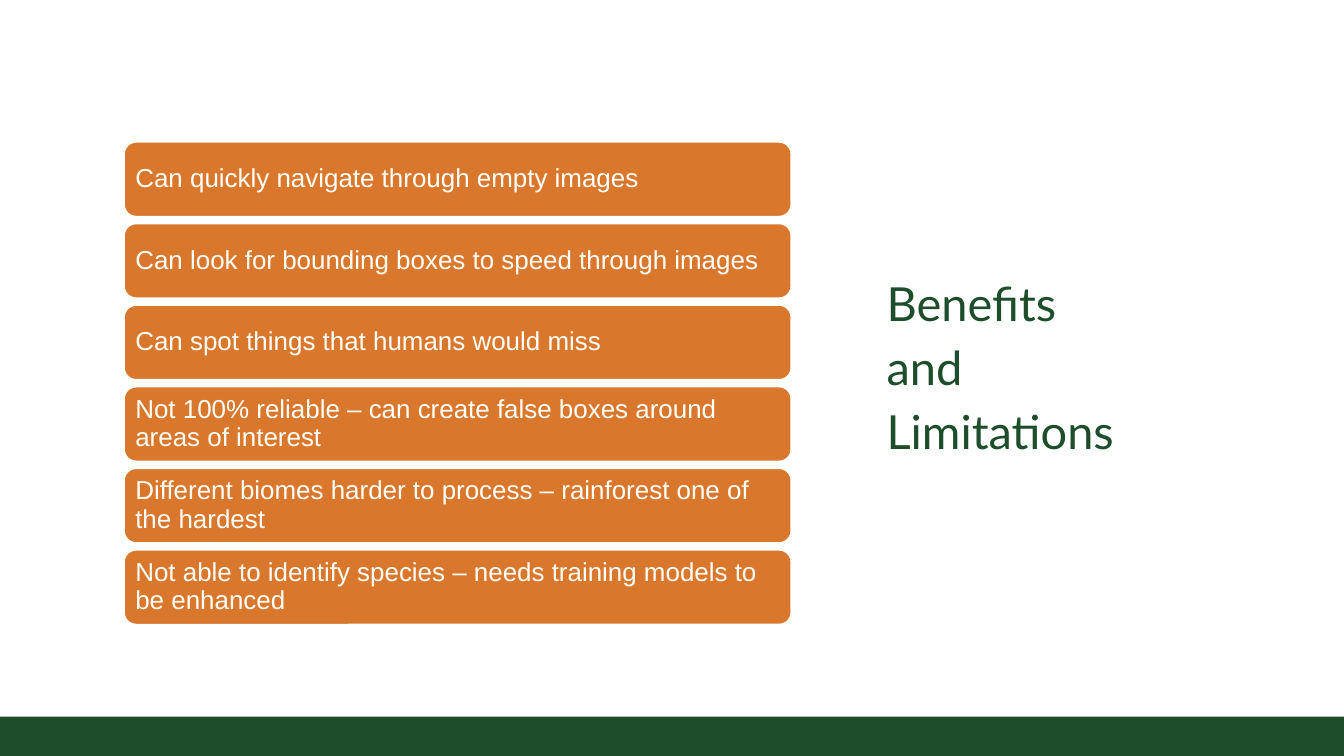
from pptx import Presentation
from pptx.dml.color import RGBColor
from pptx.enum.shapes import MSO_SHAPE
from pptx.enum.text import MSO_ANCHOR, PP_ALIGN
from pptx.util import Cm, Pt

RECTANGLE = MSO_SHAPE.RECTANGLE
ROUNDED = MSO_SHAPE.ROUNDED_RECTANGLE
TOP, MIDDLE = MSO_ANCHOR.TOP, MSO_ANCHOR.MIDDLE
LEFT = PP_ALIGN.LEFT

GREEN = RGBColor(0x1E, 0x4D, 0x2B)
ORANGE = RGBColor(0xD9, 0x78, 0x2C)
WHITE = RGBColor(0xFF, 0xFF, 0xFF)

SLIDE_WIDTH, SLIDE_HEIGHT = 38.38, 21.59
BAR_HEIGHT = 1.12
CARD_LEFT, CARD_TOP = 3.53, 4.04
CARD_WIDTH, CARD_HEIGHT, CARD_PITCH = 19.08, 2.16, 2.33

POINTS = [
    "Can quickly navigate through empty images",
    "Can look for bounding boxes to speed through images",
    "Can spot things that humans would miss",
    "Not 100% reliable – can create false boxes around areas of interest",
    "Different biomes harder to process – rainforest one of the hardest",
    "Not able to identify species – needs training models to be enhanced",
]


def write_text(shape, lines, *, font, size, color, anchor, margins,
               line_spacing=1.0, space_after=0):
    frame = shape.text_frame
    frame.word_wrap = True
    frame.vertical_anchor = anchor
    frame.margin_left = frame.margin_right = Cm(margins[0])
    frame.margin_top = frame.margin_bottom = Cm(margins[1])
    frame.text = "\n".join(lines)
    for paragraph in frame.paragraphs:
        paragraph.alignment = LEFT
        paragraph.line_spacing = line_spacing
        paragraph.space_after = Pt(space_after)
        paragraph.font.name = font
        paragraph.font.size = Pt(size)
        paragraph.font.color.rgb = color


presentation = Presentation()
presentation.slide_width = Cm(SLIDE_WIDTH)
presentation.slide_height = Cm(SLIDE_HEIGHT)
slide = presentation.slides.add_slide(presentation.slide_layouts[6])

# Green bar along the bottom
bar = slide.shapes.add_shape(RECTANGLE, 0, Cm(SLIDE_HEIGHT - BAR_HEIGHT),
                             Cm(SLIDE_WIDTH), Cm(BAR_HEIGHT))
bar.shadow.inherit = False
bar.fill.solid()
bar.fill.fore_color.rgb = GREEN
bar.line.fill.background()

# Title on the right
title = slide.shapes.add_textbox(Cm(25.04), Cm(7.7), Cm(11.23), Cm(7.14))
write_text(title, ["Benefits", "and", "Limitations"], font="Lato", size=38,
           color=GREEN, anchor=TOP, margins=(0.28, 0.15), space_after=6)

# Stack of cards, one per point
for index, point in enumerate(POINTS):
    card = slide.shapes.add_shape(
        ROUNDED, Cm(CARD_LEFT), Cm(CARD_TOP + index * CARD_PITCH),
        Cm(CARD_WIDTH), Cm(CARD_HEIGHT))
    card.shadow.inherit = False
    card.fill.solid()
    card.fill.fore_color.rgb = ORANGE
    card.line.color.rgb = WHITE
    card.line.width = Pt(2)
    write_text(card, [point], font="Arial", size=21, color=WHITE,
               anchor=MIDDLE, margins=(0.23, 0.23), line_spacing=0.9)

presentation.save("out.pptx")
